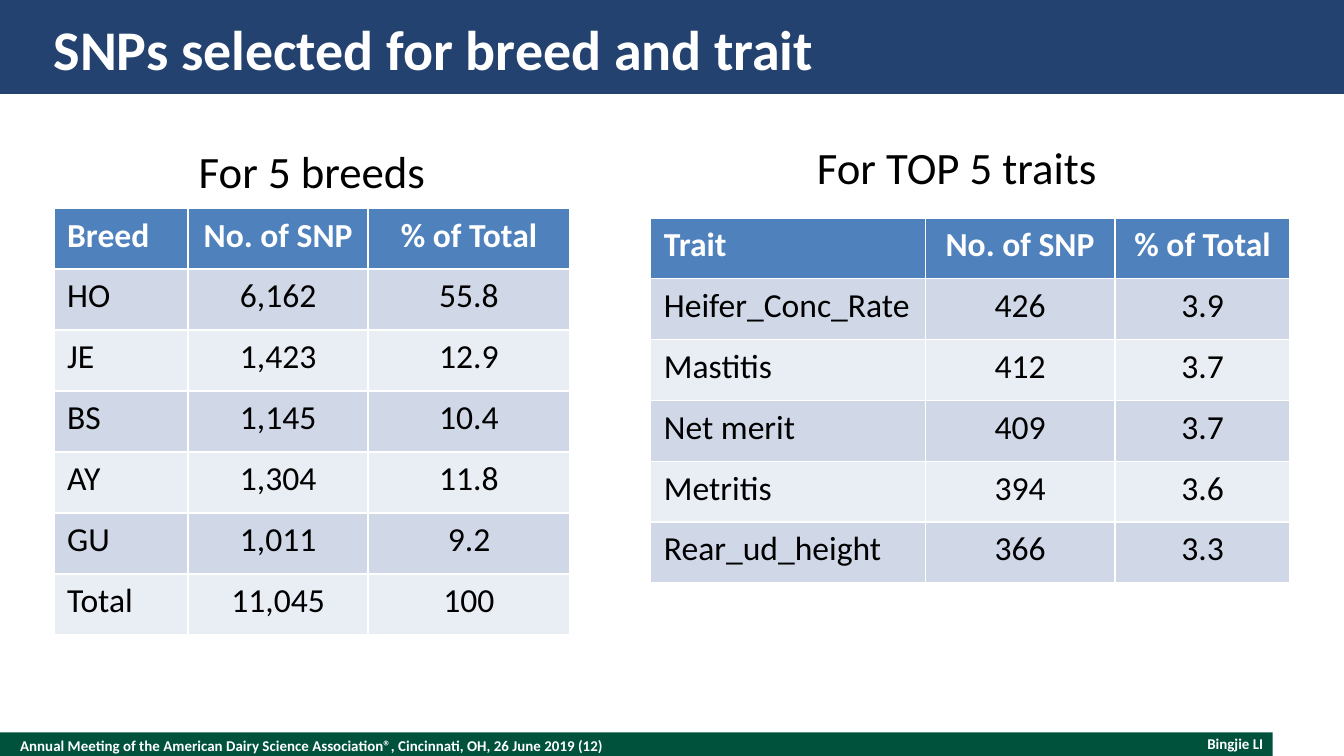
"""Builds the slide on SNPs selected for breed and trait."""
from pptx import Presentation
from pptx.dml.color import RGBColor
from pptx.enum import shapes, text
from pptx.util import Pt

FONT = "Calibri"
WHITE = RGBColor(0xFF, 0xFF, 0xFF)
BLACK = RGBColor(0x00, 0x00, 0x00)
NAVY = RGBColor(0x24, 0x42, 0x70)
GREEN = RGBColor(0x00, 0x52, 0x3C)
HEADER_BLUE = RGBColor(0x4F, 0x81, 0xBD)
BANDS = (RGBColor(0xD0, 0xD8, 0xE8), RGBColor(0xE9, 0xED, 0xF4))
ROW_HEIGHT = 32.65

BREEDS = [
    ("Breed", "No. of SNP", "% of Total"),
    ("HO", "6,162", "55.8"),
    ("JE", "1,423", "12.9"),
    ("BS", "1,145", "10.4"),
    ("AY", "1,304", "11.8"),
    ("GU", "1,011", "9.2"),
    ("Total", "11,045", "100"),
]
TRAITS = [
    ("Trait", "No. of SNP", "% of Total"),
    ("Heifer_Conc_Rate", "426", "3.9"),
    ("Mastitis", "412", "3.7"),
    ("Net merit", "409", "3.7"),
    ("Metritis", "394", "3.6"),
    ("Rear_ud_height", "366", "3.3"),
]


def style_paragraph(para, size, color, bold, align):
    """Sets the font and alignment of a paragraph."""
    para.alignment = align
    para.font.name = FONT
    para.font.size = Pt(size)
    para.font.bold = bold
    para.font.color.rgb = color


def add_band(page, left, top, width, height, color):
    """Adds a plain filled rectangle."""
    band = page.shapes.add_shape(
        shapes.MSO_SHAPE.RECTANGLE, Pt(left), Pt(top), Pt(width), Pt(height))
    band.shadow.inherit = False
    band.fill.solid()
    band.fill.fore_color.rgb = color
    band.line.fill.background()


def add_text(page, wording, left, top, width, height, size, color=BLACK,
             bold=False, align=text.PP_ALIGN.LEFT):
    """Adds a one-paragraph text box with standard insets."""
    box = page.shapes.add_textbox(Pt(left), Pt(top), Pt(width), Pt(height))
    frame = box.text_frame
    frame.word_wrap = True
    para = frame.paragraphs[0]
    para.text = wording
    style_paragraph(para, size, color, bold, align)
    return frame


def add_band_text(page, *args, **options):
    """Adds bold white text, centred vertically and without insets."""
    frame = add_text(page, *args, color=WHITE, bold=True, **options)
    frame.vertical_anchor = text.MSO_ANCHOR.MIDDLE
    frame.margin_left = frame.margin_right = Pt(0)
    frame.margin_top = frame.margin_bottom = Pt(0)


def add_snp_table(page, rows, left, top, widths):
    """Adds a banded table with a header row and centred figures."""
    table = page.shapes.add_table(
        len(rows), len(widths), Pt(left), Pt(top),
        Pt(sum(widths)), Pt(ROW_HEIGHT * len(rows))).table
    for column, width in zip(table.columns, widths):
        column.width = Pt(width)
    for r, row in enumerate(rows):
        table.rows[r].height = Pt(ROW_HEIGHT)
        header = r == 0
        for c, wording in enumerate(row):
            cell = table.cell(r, c)
            cell.fill.solid()
            cell.fill.fore_color.rgb = HEADER_BLUE if header else BANDS[(r - 1) % 2]
            para = cell.text_frame.paragraphs[0]
            para.text = wording
            align = text.PP_ALIGN.CENTER if c else text.PP_ALIGN.LEFT
            style_paragraph(para, 18, WHITE if header else BLACK, header, align)


def main():
    """Builds and saves the deck."""
    deck = Presentation()
    deck.slide_width, deck.slide_height = Pt(720), Pt(405)
    page = deck.slides.add_slide(deck.slide_layouts[6])

    add_band(page, 0, 392.4, 681.84, 14.4, GREEN)
    add_band(page, 0, 0, 720, 50.4, NAVY)
    add_band_text(
        page, "Annual Meeting of the American Dairy Science Association®, "
        "Cincinnati, OH, 26 June 2019 (12)", 10.8, 392.4, 468, 14.4, 8)
    add_band_text(page, "Bingjie LI", 518.4, 393.84, 158.4, 9.36, 8,
                  align=text.PP_ALIGN.RIGHT)
    add_band_text(page, "SNPs selected for breed and trait",
                  28.8, 7.2, 662.4, 37.44, 30)

    add_snp_table(page, BREEDS, 28.8, 111.6, (72, 96.48, 108))
    add_snp_table(page, TRAITS, 348.48, 116.64, (147.24, 101.52, 94))
    add_text(page, "For TOP 5 traits", 430.56, 71.28, 201.6, 36, 24)
    add_text(page, "For 5 breeds", 99.36, 73.44, 157.68, 36, 24)

    deck.save("out.pptx")


if __name__ == "__main__":
    main()
